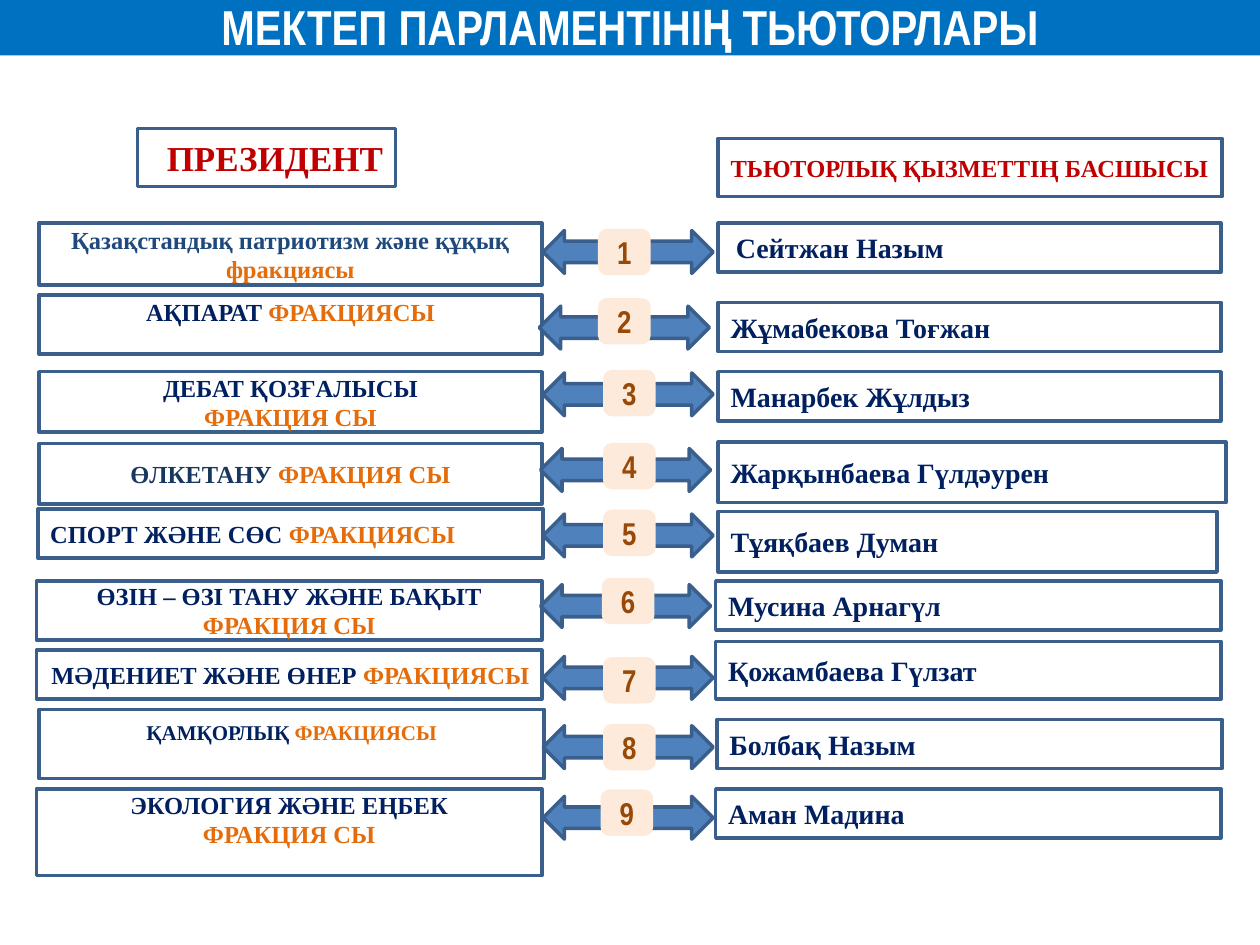
from pptx import Presentation
from pptx.dml.color import RGBColor
from pptx.enum.shapes import MSO_SHAPE as Shape
from pptx.enum.text import MSO_ANCHOR as Anchor, MSO_AUTO_SIZE as AutoSize, PP_ALIGN as Align
from pptx.util import Inches, Pt

NAVY, ORANGE, RED = "002060", "E46C0A", "C00000"
SERIF, NARROW = "Times New Roman", "Arial Narrow"
BORDER = "3A5F8C"

deck = Presentation()
deck.slide_width, deck.slide_height = Inches(10), Inches(7.5)
page = deck.slides.add_slide(deck.slide_layouts[5])


def add_block(kind, bounds, fill, line):
    block = page.shapes.add_shape(kind, *[Inches(value) for value in bounds])
    block.shadow.inherit = False
    block.fill.solid()
    block.fill.fore_color.rgb = RGBColor.from_string(fill)
    block.line.color.rgb = RGBColor.from_string(line)
    block.line.width = Pt(2)
    return block


def write(shape, lines, size, font=SERIF, align=Align.LEFT, top=None, side=0.1):
    """Fill a shape with lines of (text, colour) spans; top is an inset for top-anchored text."""
    frame = shape.text_frame
    frame.word_wrap = True
    frame.auto_size = AutoSize.NONE
    frame.vertical_anchor = Anchor.MIDDLE if top is None else Anchor.TOP
    frame.margin_left = frame.margin_right = Inches(side)
    frame.margin_top, frame.margin_bottom = Inches(top or 0), 0
    for number, spans in enumerate(lines):
        para = frame.add_paragraph() if number else frame.paragraphs[0]
        para.alignment = align
        for text, color in spans:
            span = para.add_run()
            span.text = text
            span.font.name = font
            span.font.size = Pt(size)
            span.font.bold = True
            span.font.color.rgb = RGBColor.from_string(color)


title = page.shapes.title
title.left, title.top = Inches(0), Inches(-0.03)
title.width, title.height = Inches(10), Inches(0.47)
title.fill.solid()
title.fill.fore_color.rgb = RGBColor.from_string("0070C0")
write(title, [[("МЕКТЕП ПАРЛАМЕНТІНІҢ ТЬЮТОРЛАРЫ", "FFFFFF")]], 28, NARROW, Align.CENTER)

president = add_block(Shape.RECTANGLE, (1.09, 1.02, 2.05, 0.46), "FFFFFF", BORDER)
write(president, [[("ПРЕЗИДЕНТ", RED)]], 20, align=Align.RIGHT)
head_tutor = add_block(Shape.RECTANGLE, (5.7, 1.1, 4, 0.46), "FFFFFF", BORDER)
write(head_tutor, [[("ТЬЮТОРЛЫҚ ҚЫЗМЕТТІҢ БАСШЫСЫ", RED)]], 14)

# Faction: bounds, lines, size, alignment, top inset
factions = [
    ((0.31, 1.77, 3.99, 0.49),
     [[("Қазақстандық патриотизм және құқық", "1F497D"), (" фракциясы", ORANGE)]],
     14, Align.CENTER, None),
    ((0.31, 2.34, 3.99, 0.47), [[("АҚПАРАТ ", NAVY), ("ФРАКЦИЯСЫ", ORANGE)]],
     14, Align.CENTER, 0.02),
    ((0.31, 2.95, 3.99, 0.48), [[("ДЕБАТ ҚОЗҒАЛЫСЫ", NAVY)], [("ФРАКЦИЯ СЫ", ORANGE)]],
     14, Align.CENTER, None),
    ((0.31, 3.52, 3.99, 0.48), [[("ӨЛКЕТАНУ ", "17375E"), ("ФРАКЦИЯ СЫ", ORANGE)]],
     14, Align.CENTER, None),
    ((0.3, 4.04, 4.01, 0.39), [[("СПОРТ ЖӘНЕ СӨС ", NAVY), ("ФРАКЦИЯСЫ", ORANGE)]],
     14, Align.LEFT, None),
    ((0.29, 4.61, 4.01, 0.47),
     [[("ӨЗІН – ӨЗІ ТАНУ ЖӘНЕ БАҚЫТ ", NAVY), ("ФРАКЦИЯ СЫ", ORANGE)]],
     14, Align.CENTER, None),
    ((0.29, 5.16, 4.01, 0.39), [[("МӘДЕНИЕТ ЖӘНЕ ӨНЕР ", NAVY), ("ФРАКЦИЯСЫ", ORANGE)]],
     14, Align.RIGHT, None),
    ((0.31, 5.63, 4.01, 0.55), [[("ҚАМҚОРЛЫҚ ", NAVY), ("ФРАКЦИЯСЫ", ORANGE)]],
     12, Align.CENTER, 0.08),
    ((0.29, 6.26, 4.01, 0.69), [[("ЭКОЛОГИЯ ЖӘНЕ ЕҢБЕК", NAVY)], [("ФРАКЦИЯ СЫ", ORANGE)]],
     14, Align.CENTER, 0.01),
]

# Tutor: name, bounds, side inset
tutors = [
    ("Сейтжан Назым", (5.7, 1.77, 3.99, 0.39), 0.14),
    ("Жұмабекова Тоғжан", (5.7, 2.4, 3.99, 0.39), 0.1),
    ("Манарбек Жұлдыз", (5.7, 2.95, 3.99, 0.39), 0.1),
    ("Жарқынбаева Гүлдәурен", (5.7, 3.51, 4.03, 0.48), 0.1),
    ("Тұяқбаев Думан", (5.7, 4.06, 3.96, 0.48), 0.1),
    ("Мусина Арнагүл", (5.68, 4.61, 4.01, 0.39), 0.1),
    ("Қожамбаева Гүлзат", (5.68, 5.09, 4.01, 0.46), 0.1),
    ("Болбақ Назым", (5.69, 5.71, 4.01, 0.39), 0.1),
    ("Аман Мадина", (5.68, 6.26, 4.01, 0.39), 0.1),
]

# Left and top of each arrow and of each number badge
arrows = [(4.31, 1.83), (4.28, 2.43), (4.31, 2.96), (4.29, 3.56), (4.31, 4.08),
          (4.29, 4.64), (4.31, 5.21), (4.31, 5.76), (4.31, 6.32)]
badges = [(4.76, 1.83), (4.76, 2.38), (4.8, 2.95), (4.8, 3.53), (4.8, 4.06),
          (4.79, 4.6), (4.8, 5.23), (4.8, 5.76), (4.78, 6.28)]

rows = zip(factions, tutors, arrows, badges)
for number, (faction, tutor, arrow_at, badge_at) in enumerate(rows, start=1):
    bounds, lines, size, align, top = faction
    faction_box = add_block(Shape.RECTANGLE, bounds, "FFFFFF", BORDER)
    write(faction_box, lines, size, align=align, top=top)

    name, bounds, side = tutor
    tutor_box = add_block(Shape.RECTANGLE, bounds, "FFFFFF", BORDER)
    write(tutor_box, [[(name, NAVY)]], 16, side=side)

    add_block(Shape.LEFT_RIGHT_ARROW, (*arrow_at, 1.35, 0.34), "4F81BD", BORDER)
    badge = add_block(Shape.ROUNDED_RECTANGLE, (*badge_at, 0.39, 0.34), "FDEADA", "FDEADA")
    write(badge, [[(str(number), "984807")]], 18, NARROW, Align.CENTER)

deck.save("out.pptx")
